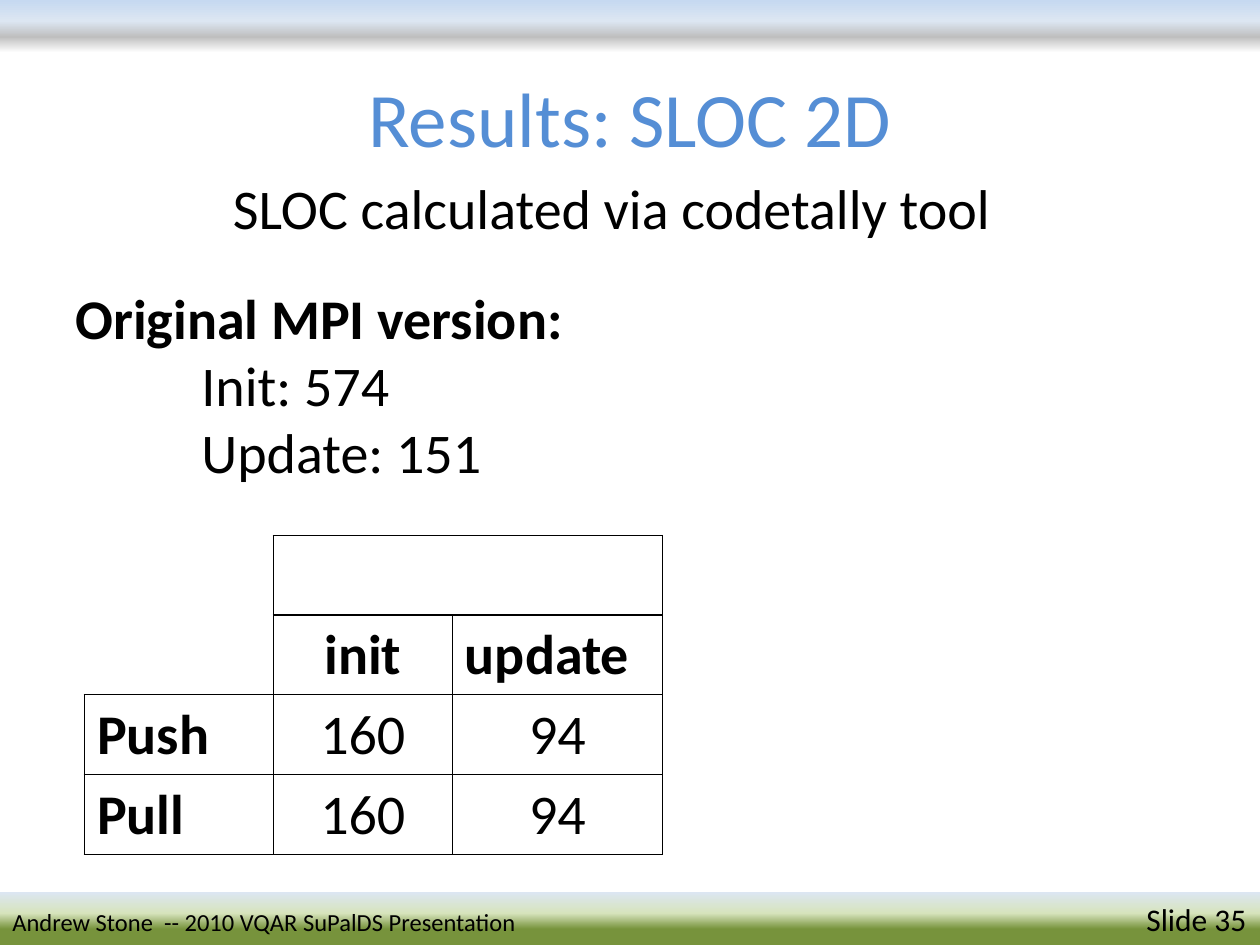
from lxml import etree
from pptx import Presentation
from pptx.dml.color import RGBColor
from pptx.enum.shapes import MSO_SHAPE
from pptx.enum.text import MSO_ANCHOR, PP_ALIGN
from pptx.oxml import parse_xml
from pptx.oxml.ns import nsdecls, qn
from pptx.util import Inches, Pt

RECT = MSO_SHAPE.RECTANGLE
MIDDLE = MSO_ANCHOR.MIDDLE
LEFT, CENTER = PP_ALIGN.LEFT, PP_ALIGN.CENTER
FONT = "Calibri"
BLACK = "000000"
TITLE_BLUE = "558ED5"
HEADER_STOPS = [(0, "C6D9F1"), (40, "DCE6F2"), (70, "BFBFBF"), (100, "FFFFFF")]
FOOTER_STOPS = [(0, "DCE6F2"), (40, "D7E4BD"), (70, "77933C")]
COLUMNS = [1.5, 1.42, 1.67]
ROW_HEIGHT = 0.63
SLOC_ROWS = [
    ["", "", ""],
    ["", "init", "update"],
    ["Push", "160", "94"],
    ["Pull", "160", "94"],
]


def rgb(color):
    return RGBColor.from_string(color)


def format_run(r, size, color=BLACK, bold=False):
    r.font.name = FONT
    r.font.size = Pt(size)
    r.font.bold = bold
    r.font.color.rgb = rgb(color)


def set_tab(p, position):
    tabs = etree.SubElement(p._p.get_or_add_pPr(), qn("a:tabLst"))
    etree.SubElement(tabs, qn("a:tab"), pos=str(Inches(position)), algn="l")


def add_title(slide, text):
    sp = slide.shapes.title
    sp.left, sp.top, sp.width, sp.height = map(Inches, (0.5, 0.3, 9, 1.25))
    tf = sp.text_frame
    tf.text = text
    tf.vertical_anchor = MIDDLE
    p = tf.paragraphs[0]
    p.alignment = CENTER
    format_run(p.runs[0], 44, TITLE_BLUE)


def add_text(slide, box, lines):
    tf = slide.shapes.add_textbox(*map(Inches, box)).text_frame
    tf.word_wrap = False
    for i, (text, bold) in enumerate(lines):
        p = tf.add_paragraph() if i else tf.paragraphs[0]
        if text.startswith("\t"):
            set_tab(p, 1)
        r = p.add_run()
        r.text = text
        format_run(r, 32, bold=bold)


def add_band(slide, top, stops):
    sp = slide.shapes.add_shape(RECT, 0, Inches(top), Inches(10), Inches(0.42))
    sp.shadow.inherit = False
    sp.line.fill.background()
    sp.fill.gradient()
    grad = sp._element.spPr.find(qn("a:gradFill"))
    stop_xml = "".join(
        f'<a:gs pos="{pos * 1000}"><a:srgbClr val="{color}"/></a:gs>'
        for pos, color in stops
    )
    grad.getparent().replace(grad, parse_xml(
        f'<a:gradFill {nsdecls("a")} rotWithShape="1"><a:gsLst>{stop_xml}</a:gsLst>'
        '<a:lin ang="5400000" scaled="0"/></a:gradFill>'
    ))
    return sp


def add_footer(slide, label, number):
    tf = add_band(slide, 7.08, FOOTER_STOPS).text_frame
    tf.vertical_anchor = MIDDLE
    tf.margin_right = 0
    p = tf.paragraphs[0]
    p.alignment = LEFT
    set_tab(p, 9)
    for text, size in ((label + " \t", 14), (number, 18)):
        r = p.add_run()
        r.text = text
        format_run(r, size)


def set_borders(cell, sides):
    tcPr = cell._tc.get_or_add_tcPr()
    for side in "LRTB":
        ln = etree.SubElement(tcPr, qn(f"a:ln{side}"), w=str(Pt(1)))
        if side in sides:
            fill = etree.SubElement(ln, qn("a:solidFill"))
            etree.SubElement(fill, qn("a:srgbClr"), val=BLACK)
        else:
            etree.SubElement(ln, qn("a:noFill"))


def add_sloc_table(slide):
    table = slide.shapes.add_table(
        len(SLOC_ROWS), len(COLUMNS), Inches(0.67), Inches(4.25),
        Inches(sum(COLUMNS)), Inches(ROW_HEIGHT * len(SLOC_ROWS)),
    ).table
    table.first_row = False
    table.horz_banding = False
    for column, width in zip(table.columns, COLUMNS):
        column.width = Inches(width)
    corner_sides = {(0, 0): "R", (1, 0): "RB"}
    for i, values in enumerate(SLOC_ROWS):
        table.rows[i].height = Inches(ROW_HEIGHT)
        for j, text in enumerate(values):
            cell = table.cell(i, j)
            set_borders(cell, corner_sides.get((i, j), "LRTB"))
            cell.fill.background()
            if text:
                cell.text = text
                p = cell.text_frame.paragraphs[0]
                p.alignment = LEFT if j == 0 or text == "update" else CENTER
                format_run(p.runs[0], 32, bold=i == 1 or j == 0)
    table.cell(0, 1).merge(table.cell(0, 2))


def main():
    prs = Presentation()
    prs.slide_width, prs.slide_height = Inches(10), Inches(7.5)
    slide = prs.slides.add_slide(prs.slide_layouts[5])
    add_title(slide, "Results: SLOC 2D")
    add_band(slide, 0, HEADER_STOPS)
    add_text(slide, (0.5, 2.2, 4.11, 1.72), [
        ("Original MPI version:", True),
        ("\tInit: 574", False),
        ("\tUpdate: 151", False),
    ])
    add_sloc_table(slide)
    add_footer(slide, "Andrew Stone  -- 2010 VQAR SuPalDS Presentation", "Slide 35")
    add_text(slide, (1.75, 1.33, 6.38, 0.64),
             [("SLOC calculated via codetally tool", False)])
    prs.save("out.pptx")


if __name__ == "__main__":
    main()
